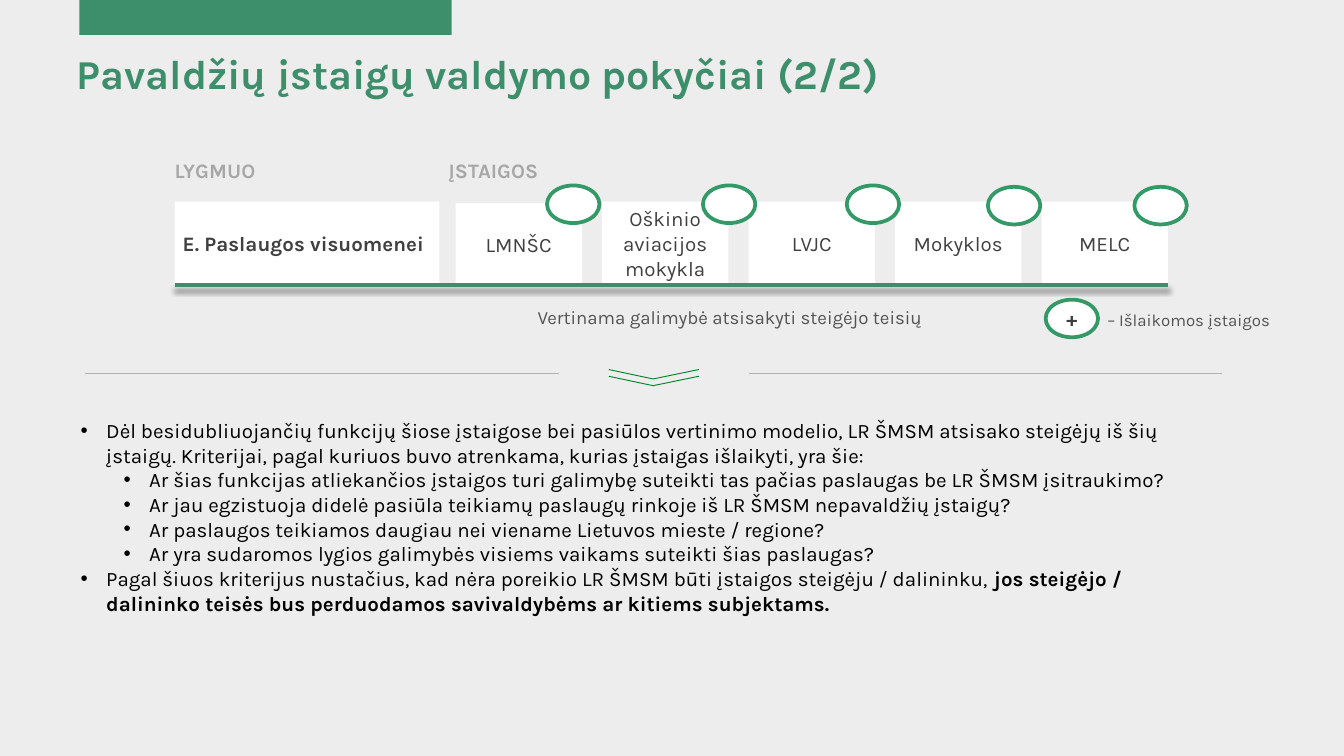
from lxml import etree
from pptx import Presentation
from pptx.dml.color import RGBColor as RGB
from pptx.enum.shapes import MSO_CONNECTOR as Conn, MSO_SHAPE as Shape
from pptx.enum.text import MSO_ANCHOR as Anchor, PP_ALIGN as Align
from pptx.oxml.ns import qn
from pptx.util import Inches, Pt

FONT = "Karla"
GREEN = RGB(0x3D, 0x8F, 0x6C)
RING = RGB(0x33, 0x99, 0x66)
LEAF = RGB(0x00, 0x88, 0x2B)
PAPER = RGB(0xED, 0xED, 0xED)
WHITE = RGB(0xFF, 0xFF, 0xFF)
BLACK = RGB(0, 0, 0)
DARK = RGB(0x40, 0x40, 0x40)
GREY = RGB(0x53, 0x53, 0x53)
PALE = RGB(0xA7, 0xA7, 0xA7)
RULE = RGB(0xB2, 0xB2, 0xB2)

UNITS = ["LMNŠC", "Oškinio aviacijos mokykla", "LVJC", "Mokyklos", "MELC"]
RINGS = [(4.07, 1.38), (5.23, 1.38), (6.3, 1.38), (7.35, 1.39), (8.44, 1.39)]

# Each point: indent level, plain text, bold ending
POINTS = [
    (0, "Dėl besidubliuojančių funkcijų šiose įstaigose bei pasiūlos vertinimo modelio, "
        "LR ŠMSM atsisako steigėjų iš šių įstaigų. Kriterijai, pagal kuriuos buvo atrenkama, "
        "kurias įstaigas išlaikyti, yra šie:", ""),
    (3, "Ar šias funkcijas atliekančios įstaigos turi galimybę suteikti tas pačias paslaugas "
        "be LR ŠMSM įsitraukimo?", ""),
    (3, "Ar jau egzistuoja didelė pasiūla teikiamų paslaugų rinkoje iš LR ŠMSM nepavaldžių "
        "įstaigų?", ""),
    (3, "Ar paslaugos teikiamos daugiau nei viename Lietuvos mieste / regione?", ""),
    (3, "Ar yra sudaromos lygios galimybės visiems vaikams suteikti šias paslaugas?", ""),
    (0, "Pagal šiuos kriterijus nustačius, kad nėra poreikio LR ŠMSM būti įstaigos steigėju / "
        "dalininku, ", "jos steigėjo / dalininko teisės bus perduodamos savivaldybėms ar "
        "kitiems subjektams."),
]


def add_run(para, text, size=11, color=DARK, bold=False):
    run = para.add_run()
    run.text = text
    font = run.font
    font.name, font.size, font.bold = FONT, Pt(size), bold
    font.color.rgb = color


def set_frame(shape, anchor=Anchor.MIDDLE, pad=0.06, side=None):
    frame = shape.text_frame
    frame.word_wrap = True
    frame.vertical_anchor = anchor
    frame.margin_top = frame.margin_bottom = Inches(pad)
    frame.margin_left = frame.margin_right = Inches(pad if side is None else side)
    return frame


def write(shape, text, align=Align.LEFT, anchor=Anchor.MIDDLE, pad=0.06, side=None, **style):
    para = set_frame(shape, anchor, pad, side).paragraphs[0]
    para.alignment = align
    add_run(para, text, **style)


def add_box(slide, x, y, w, h):
    return slide.shapes.add_textbox(Inches(x), Inches(y), Inches(w), Inches(h))


def add_form(slide, kind, x, y, w, h, fill=WHITE, line=None):
    form = slide.shapes.add_shape(kind, Inches(x), Inches(y), Inches(w), Inches(h))
    form.shadow.inherit = False
    form.fill.solid()
    form.fill.fore_color.rgb = fill
    if line is None:
        form.line.fill.background()
    else:
        form.line.color.rgb = line
        form.line.width = Pt(2)
    return form


def add_ring(slide, x, y):
    return add_form(slide, Shape.OVAL, x, y, 0.39, 0.28, line=RING)


def add_line(slide, x1, x2, y, color, width, shade=False):
    line = slide.shapes.add_connector(Conn.STRAIGHT, Inches(x1), Inches(y), Inches(x2), Inches(y))
    line.line.color.rgb = color
    line.line.width = Pt(width)
    fx = etree.SubElement(line._element.spPr, qn("a:effectLst"))
    if shade:
        glow = etree.SubElement(fx, qn("a:outerShdw"), blurRad=str(Pt(3)), dist=str(Pt(2)),
                                dir="5400000", algn="t", rotWithShape="0")
        tint = etree.SubElement(glow, qn("a:srgbClr"), val="000000")
        etree.SubElement(tint, qn("a:alpha"), val="50000")


def add_chevron(slide, y):
    pen = slide.shapes.build_freeform(Inches(4.53), Inches(y), scale=1.0)
    pen.add_line_segments([(Inches(4.86), Inches(y + 0.07)), (Inches(5.2), Inches(y))],
                          close=False)
    form = pen.convert_to_shape()
    form.shadow.inherit = False
    form.fill.background()
    form.line.color.rgb = LEAF
    form.line.width = Pt(0.5)


def add_points(slide):
    frame = set_frame(add_box(slide, 0.54, 3.05, 8.51, 0.67), Anchor.TOP)
    for i, (level, plain, strong) in enumerate(POINTS):
        para = frame.add_paragraph() if i else frame.paragraphs[0]
        para.level = level
        props = para._p.get_or_add_pPr()
        props.set("marL", str(Inches(0.51 if level else 0.19)))
        props.set("indent", str(Inches(-0.19)))
        etree.SubElement(props, qn("a:buFont"), typeface="Arial")
        etree.SubElement(props, qn("a:buChar"), char="•")
        add_run(para, plain, color=BLACK)
        if strong:
            add_run(para, strong, color=BLACK, bold=True)


def main():
    deck = Presentation()
    deck.slide_width = Inches(10)
    deck.slide_height = Inches(10 * 9 / 16)
    slide = deck.slides.add_slide(deck.slide_layouts[6])
    back = slide.background.fill
    back.solid()
    back.fore_color.rgb = PAPER

    # Heading
    add_form(slide, Shape.RECTANGLE, 0.59, 0, 2.77, 0.26, fill=GREEN)
    write(add_box(slide, 0.54, 0.33, 8.4, 0.62), "Pavaldžių įstaigų valdymo pokyčiai (2/2)",
          anchor=Anchor.TOP, pad=0.03, size=22, color=GREEN, bold=True)

    # Row of institutions
    for i, name in enumerate(UNITS):
        top = 1.5 if i else 1.51
        cell = add_form(slide, Shape.RECTANGLE, 3.39 + 1.09 * i, top, 0.94, 0.62)
        write(cell, name, align=Align.CENTER)
    cell = add_form(slide, Shape.RECTANGLE, 1.3, 1.5, 1.97, 0.62)
    write(cell, "E. Paslaugos visuomenei", bold=True)
    add_line(slide, 1.3, 8.69, 2.12, GREEN, 2, shade=True)

    # Column heads
    for x, head in [(1.2, "LYGMUO"), (3.24, "ĮSTAIGOS")]:
        write(add_box(slide, x, 1.13, 2.05, 0.29), head, anchor=Anchor.TOP,
              pad=0.05, side=0.1, color=PALE, bold=True)

    # Divider
    for y in (2.75, 2.8):
        add_chevron(slide, y)
    for x1, x2 in [(5.57, 9.09), (0.63, 4.16)]:
        add_line(slide, x1, x2, 2.78, RULE, 0.5)

    add_points(slide)

    # Rings and legend
    for x, y in RINGS:
        add_ring(slide, x, y)
    write(add_ring(slide, 7.78, 2.23), "+", align=Align.CENTER, pad=0, bold=True)
    write(add_box(slide, 8.14, 2.24, 2.72, 0.28), "– Išlaikomos įstaigos",
          pad=0.05, side=0.1, size=9, color=GREY)
    write(add_box(slide, 3.94, 2.22, 3.49, 0.28),
          "Vertinama galimybė atsisakyti steigėjo teisių", size=10, color=GREY)

    deck.save("out.pptx")


if __name__ == "__main__":
    main()
